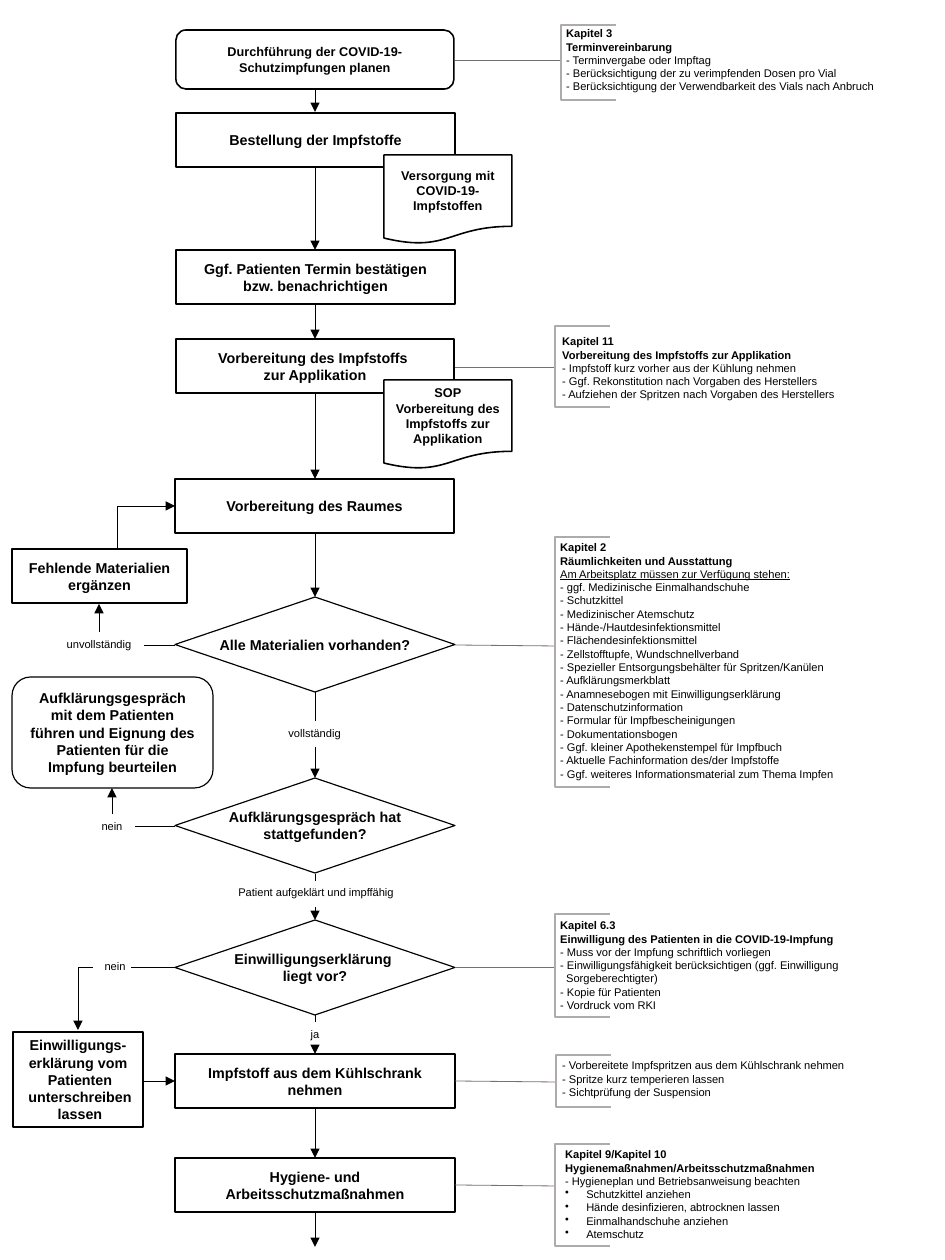
"""Build the flowchart slide for planning COVID-19 vaccinations in a practice."""
from dataclasses import dataclass

from lxml import etree
from pptx import Presentation, util as u
from pptx.dml.color import RGBColor
from pptx.enum import shapes, text
from pptx.oxml.ns import qn

PX = 8000
SLIDE_SIZE = (945, 1260)
FLOW_X = 315
BRACKET_WIDTH = 55
BULLET_INDENT = 21
CONTINUATION_INDENT = 6
KIND = shapes.MSO_SHAPE


@dataclass(frozen=True)
class Theme:
    font: str = "Arial"
    ink: RGBColor = RGBColor(0, 0, 0)
    paper: RGBColor = RGBColor(255, 255, 255)
    link: RGBColor = RGBColor(0x76, 0x71, 0x71)
    bracket: RGBColor = RGBColor(0xAF, 0xAB, 0xAB)
    step_size: int = 9
    document_size: int = 8
    note_size: int = 7
    thin: float = 0.5
    normal: float = 0.75
    strong: float = 1


THEME = Theme()

PROCESSES = [
    (176, 113, 279, 54, "Bestellung der Impfstoffe"),
    (176, 250, 279, 54, "Ggf. Patienten Termin bestätigen bzw. benachrichtigen"),
    (176, 339, 278, 54, "Vorbereitung des Impfstoffs \nzur Applikation"),
    (175, 479, 279, 54, "Vorbereitung des Raumes"),
    (175, 1054, 280, 54, "Impfstoff aus dem Kühlschrank nehmen"),
    (175, 1158, 280, 54, "Hygiene- und Arbeitsschutzmaßnahmen"),
    (12, 549, 175, 54, "Fehlende Materialien ergänzen"),
]
DECISIONS = [
    (597, "Alle Materialien vorhanden?"),
    (778, "Aufklärungsgespräch hat\nstattgefunden?"),
    (920, "Einwilligungserklärung \nliegt vor?"),
]
DOCUMENTS = [
    (155, "Versorgung mit COVID-19-Impfstoffen"),
    (380, "SOP\nVorbereitung des\nImpfstoffs zur\nApplikation"),
]
LABELS = [
    (277, 721, 75, "vollständig"),
    (179, 880, 274, "Patient aufgeklärt und impffähig"),
    (299, 1022, 32, "ja"),
    (55, 632, 88, "unvollständig"),
    (90, 814, 44, "nein"),
    (93, 954, 44, "nein"),
]
FLOW_ARROWS = [(90, 112), (167, 250), (305, 339), (394, 479), (534, 597), (747, 778),
               (907, 920), (1047, 1054), (1109, 1158), (1212, 1247)]
FLOW_STUBS = [(692, 721), (874, 881), (1015, 1022)]
SIDE_ARROWS = [(99, 632, 99, 604), (112, 814, 112, 788), (143, 1081, 175, 1081)]
SIDE_STUBS = [(175, 645, 144, 645), (175, 826, 135, 826), (175, 967, 131, 967)]
NOTE_LINKS = [(455, 60, 561, 60), (455, 367, 555, 367), (455, 645, 555, 646),
              (455, 967, 555, 967), (455, 1081, 555, 1082), (455, 1185, 555, 1186)]

NOTES = [
    ((555, 21, 377, 79), (561, 25, 75), ["Kapitel 3", "Terminvereinbarung"], [
        "- Terminvergabe oder Impftag",
        "- Berücksichtigung der zu verimpfenden Dosen pro Vial",
        "- Berücksichtigung der Verwendbarkeit des Vials nach Anbruch"]),
    ((551, 329, 321, 79), (555, 326, 81),
     ["Kapitel 11", "Vorbereitung des Impfstoffs zur Applikation"], [
        "- Impfstoff kurz vorher aus der Kühlung nehmen",
        "- Ggf. Rekonstitution nach Vorgaben des Herstellers",
        "- Aufziehen der Spritzen nach Vorgaben des Herstellers"]),
    ((549, 535, 342, 254), (555, 537, 250),
     ["Kapitel 2", "Räumlichkeiten und Ausstattung"], [
        ("underline", "Am Arbeitsplatz müssen zur Verfügung stehen:"),
        "- ggf. Medizinische Einmalhandschuhe",
        "- Schutzkittel",
        "- Medizinischer Atemschutz",
        "- Hände-/Hautdesinfektionsmittel",
        "- Flächendesinfektionsmittel",
        "- Zellstofftupfe, Wundschnellverband",
        "- Spezieller Entsorgungsbehälter für Spritzen/Kanülen",
        "- Aufklärungsmerkblatt",
        "- Anamnesebogen mit Einwilligungserklärung",
        "- Datenschutzinformation",
        "- Formular für Impfbescheinigungen",
        "- Dokumentationsbogen",
        "- Ggf. kleiner Apothekenstempel für Impfbuch",
        "- Aktuelle Fachinformation des/der Impfstoffe",
        "- Ggf. weiteres Informationsmaterial zum Thema Impfen"]),
    ((549, 913, 377, 106), (555, 914, 103),
     ["Kapitel 6.3", "Einwilligung des Patienten in die COVID-19-Impfung"], [
        "- Muss vor der Impfung schriftlich vorliegen",
        "- Einwilligungsfähigkeit berücksichtigen (ggf. Einwilligung",
        ("continuation", "Sorgeberechtigter)"),
        "- Kopie für Patienten",
        "- Vordruck vom RKI"]),
    ((551, 1053, 347, 54), (556, 1055, 52), [], [
        "- Vorbereitete Impfspritzen aus dem Kühlschrank nehmen",
        "- Spritze kurz temperieren lassen",
        "- Sichtprüfung der Suspension"]),
    ((554, 1142, 291, 106), (555, 1144, 102),
     ["Kapitel 9/Kapitel 10", "Hygienemaßnahmen/Arbeitsschutzmaßnahmen"], [
        "- Hygieneplan und Betriebsanweisung beachten",
        ("bullet", "Schutzkittel anziehen"),
        ("bullet", "Hände desinfizieren, abtrocknen lassen"),
        ("bullet", "Einmalhandschuhe anziehen"),
        ("bullet", "Atemschutz")]),
]


def px(*lengths):
    return [u.Emu(length * PX) for length in lengths]


def style_line(line, color, width):
    line.color.rgb = color
    line.width = u.Pt(width)


def write_lines(frame, lines, size, bold=False, align=text.PP_ALIGN.LEFT):
    frame.text = "\n".join(lines)
    for paragraph in frame.paragraphs:
        paragraph.alignment = align
        font = paragraph.font
        font.name, font.size, font.bold = THEME.font, u.Pt(size), bold
        font.color.rgb = THEME.ink


def add_step(slide, kind, box, words, size=THEME.step_size, width=THEME.normal, wrap=True):
    shape = slide.shapes.add_shape(kind, *px(*box))
    shape.shadow.inherit = False
    shape.fill.solid()
    shape.fill.fore_color.rgb = THEME.paper
    style_line(shape.line, THEME.ink, width)
    shape.text_frame.word_wrap = wrap
    write_lines(shape.text_frame, words.split("\n"), size, True, text.PP_ALIGN.CENTER)


def add_text(slide, box, lines, align=text.PP_ALIGN.LEFT):
    frame = slide.shapes.add_textbox(*px(*box)).text_frame
    frame.word_wrap = True
    write_lines(frame, lines, THEME.note_size, align=align)
    return frame


def add_line(slide, ends, color=THEME.ink, arrow=None, elbow=False):
    kind = shapes.MSO_CONNECTOR.ELBOW if elbow else shapes.MSO_CONNECTOR.STRAIGHT
    connector = slide.shapes.add_connector(kind, *px(*ends))
    style_line(connector.line, color, THEME.thin)
    properties = connector._element.spPr
    if elbow:
        properties.find(qn("a:prstGeom")).set("prst", "bentConnector2")
    if arrow:
        etree.SubElement(properties.find(qn("a:ln")), qn(f"a:{arrow}End"), type="triangle")
    etree.SubElement(properties, qn("a:effectLst"))


def add_bracket(slide, left, top, height):
    right, bottom = left + BRACKET_WIDTH, top + height
    builder = slide.shapes.build_freeform(right, top, scale=PX)
    builder.add_line_segments([(left, top), (left, bottom), (right, bottom)], close=False)
    bracket = builder.convert_to_shape()
    bracket.shadow.inherit = False
    bracket.fill.background()
    style_line(bracket.line, THEME.bracket, THEME.normal)


def indent_paragraph(paragraph, margin, bullet=False):
    properties = paragraph._p.get_or_add_pPr()
    properties.set("marL", str(margin * PX))
    if bullet:
        properties.set("indent", str(-margin * PX))
        properties.insert(0, etree.Element(qn("a:buChar"), char="•"))


def add_note(slide, box, bracket, headings, body):
    items = [("heading", line) for line in headings]
    items += [("plain", item) if isinstance(item, str) else item for item in body]
    frame = add_text(slide, box, [line for _, line in items])
    for paragraph, (style, _) in zip(frame.paragraphs, items):
        paragraph.font.bold = style == "heading"
        paragraph.font.underline = style == "underline"
        if style == "bullet":
            indent_paragraph(paragraph, BULLET_INDENT, bullet=True)
        elif style == "continuation":
            indent_paragraph(paragraph, CONTINUATION_INDENT)
    add_bracket(slide, *bracket)


def add_steps(slide):
    add_step(slide, KIND.ROUNDED_RECTANGLE, (176, 30, 278, 59),
             "Durchführung der COVID-19-\nSchutzimpfungen planen",
             THEME.document_size, THEME.strong, wrap=False)
    for *box, words in PROCESSES:
        add_step(slide, KIND.FLOWCHART_PROCESS, box, words)
    for top, words in DECISIONS:
        add_step(slide, KIND.DIAMOND, (175, top, 280, 95), words, wrap=False)
    add_step(slide, KIND.FLOWCHART_ALTERNATE_PROCESS, (12, 677, 201, 111),
             "Aufklärungsgespräch mit dem Patienten führen und Eignung des "
             "Patienten für die Impfung beurteilen")
    add_step(slide, KIND.RECTANGLE, (13, 1032, 130, 95),
             "Einwilligungs-\nerklärung vom\n Patienten\n unterschreiben\n lassen",
             width=THEME.strong, wrap=False)


def add_lines(slide):
    for top, bottom in FLOW_ARROWS:
        add_line(slide, (FLOW_X, top, FLOW_X, bottom), arrow="tail")
    for top, bottom in FLOW_STUBS:
        add_line(slide, (FLOW_X, top, FLOW_X, bottom))
    for ends in SIDE_ARROWS:
        add_line(slide, ends, arrow="tail")
    for ends in SIDE_STUBS:
        add_line(slide, ends)
    for ends in NOTE_LINKS:
        add_line(slide, ends, THEME.link)
    add_line(slide, (175, 506, 117, 549), arrow="head", elbow=True)
    add_line(slide, (93, 967, 78, 1030), arrow="tail", elbow=True)


def main():
    presentation = Presentation()
    presentation.slide_width, presentation.slide_height = px(*SLIDE_SIZE)
    slide = presentation.slides.add_slide(presentation.slide_layouts[6])
    add_steps(slide)
    add_lines(slide)
    for top, words in DOCUMENTS:
        add_step(slide, KIND.FLOWCHART_DOCUMENT, (384, top, 128, 89), words,
                 THEME.document_size, THEME.strong)
    for left, top, width, words in LABELS:
        label = add_text(slide, (left, top, width, 25), [words], text.PP_ALIGN.CENTER)
        label.word_wrap = False
    for note in NOTES:
        add_note(slide, *note)
    presentation.save("out.pptx")


if __name__ == "__main__":
    main()
